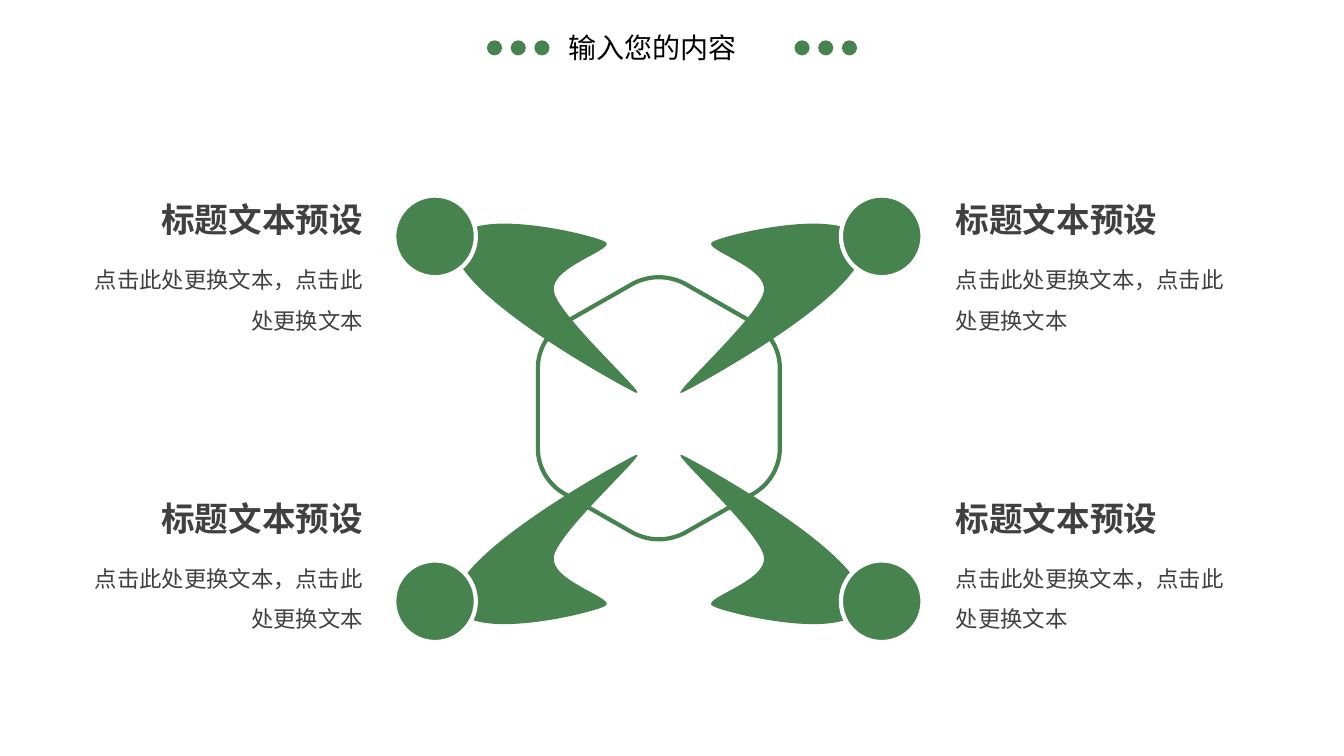
from itertools import product

from lxml import etree
from pptx import Presentation
from pptx.dml.color import RGBColor
from pptx.enum.shapes import MSO_SHAPE
from pptx.enum.text import MSO_ANCHOR, PP_ALIGN
from pptx.oxml.ns import qn
from pptx.util import Inches, Pt

OVAL = MSO_SHAPE.OVAL
TOP, MIDDLE = MSO_ANCHOR.TOP, MSO_ANCHOR.MIDDLE
LEFT, RIGHT, JUSTIFY = PP_ALIGN.LEFT, PP_ALIGN.RIGHT, PP_ALIGN.JUSTIFY

FONT = "Noto Sans CJK SC"
COLORS = {"green": "47834F", "white": "FFFFFF", "text": "404040", "black": "000000"}
HEADER = "输入您的内容"
HEADING = "标题文本预设"
BODY = "点击此处更换文本，点击此处更换文本"
HEADER_FORMAT = {"size": Pt(20)}
HEADING_FORMAT = {"size": Pt(24), "bold": True}
BODY_FORMAT = {"size": Pt(16)}
CAPTIONS = [(9.48, 1.97, LEFT), (0.74, 4.93, RIGHT), (0.74, 1.97, RIGHT), (9.48, 4.93, LEFT)]

BLADE_CENTER = (13.07 / 2, 8.41 / 2)
BLADE = [
    [(1.04, 1.31), (1.1, 1.56), (0.38, 1.74), (0.54, 1.81)],
    [(0.54, 1.81), (0.7, 1.89), (2.02, 2.2), (2.02, 1.74)],
    [(2.02, 1.74), (2.02, 1.28), (0.4, 0.39), (0.23, 0.31)],
    [(0.23, 0.31), (0.07, 0.24), (0.99, 1.06), (1.04, 1.31)],
]
HEXAGON_CENTER = (13.07 / 2, 4.05)
HEXAGON_TOP = [(-0.25, -1.24), (-0.09, -1.32), (0.09, -1.32), (0.25, -1.24)]
HEXAGON_SIDE = [(0.95, -0.84), (1.1, -0.75), (1.2, -0.58), (1.2, -0.4)]


def rgb(name):
    """Return the named colour."""
    return RGBColor.from_string(COLORS[name])


def style(sp, fill, line=None):
    """Set a flat fill and an optional 3 pt outline."""
    sp.shadow.inherit = False
    sp.fill.solid()
    sp.fill.fore_color.rgb = rgb(fill)
    if line:
        sp.line.color.rgb = rgb(line)
        sp.line.width = Pt(3)
    else:
        sp.line.fill.background()


def add_circle(s, x, y, size, line=None):
    """Add a green circle."""
    sp = s.shapes.add_shape(OVAL, Inches(x), Inches(y), Inches(size), Inches(size))
    style(sp, "green", line)


def bezier(points, steps=15):
    """Return points along a cubic curve."""
    weights = [((1 - t) ** 3, 3 * t * (1 - t) ** 2, 3 * t * t * (1 - t), t ** 3)
               for t in (i / steps for i in range(steps + 1))]
    return [tuple(sum(w * p[axis] for w, p in zip(ws, points)) for axis in (0, 1))
            for ws in weights]


def mirror(curve, sx, sy):
    """Reflect a curve across the chosen axes."""
    return [(sx * x, sy * y) for x, y in curve]


def place(points, center):
    """Move points to a centre and convert them to slide lengths."""
    return [(Inches(center[0] + x), Inches(center[1] + y)) for x, y in points]


def add_outline(s, curves, center, fill, line=None):
    """Add a closed outline made of curves joined by straight sides."""
    points = [p for curve in curves for p in place(bezier(curve), center)]
    builder = s.shapes.build_freeform(*points[0], scale=1.0)
    builder.add_line_segments(points[1:], close=True)
    sp = builder.convert_to_shape()
    style(sp, fill, line)
    return sp


def add_hexagon(s):
    """Add the rounded hexagon behind the blades."""
    half = [HEXAGON_TOP, HEXAGON_SIDE, mirror(HEXAGON_SIDE, 1, -1)[::-1]]
    curves = half + [mirror(curve, -1, -1) for curve in half]
    add_outline(s, curves, HEXAGON_CENTER, "white", "green")


def add_blade(s, sx, sy):
    """Add one blade with true cubic curves."""
    curves = [mirror(curve, sx, sy) for curve in BLADE]
    sp = add_outline(s, curves, BLADE_CENTER, "green")
    outline = next(sp._element.iter(qn("a:lnTo"))).getparent()
    for segment in outline.findall(qn("a:lnTo")):
        outline.remove(segment)
    close = outline.find(qn("a:close"))
    for curve in curves:
        cubic = etree.Element(qn("a:cubicBezTo"))
        for x, y in place(curve[1:], BLADE_CENTER):
            etree.SubElement(cubic, qn("a:pt"), x=str(x - sp.left), y=str(y - sp.top))
        close.addprevious(cubic)


def add_text(s, box, text, fmt, color="text", align=LEFT, anchor=TOP,
             wrap=True, spacing=None, inset=0):
    """Add a one-paragraph text box."""
    tf = s.shapes.add_textbox(*(Inches(v) for v in box)).text_frame
    frame = {"word_wrap": wrap, "vertical_anchor": anchor,
             "margin_left": Inches(2 * inset), "margin_right": Inches(2 * inset),
             "margin_top": Inches(inset), "margin_bottom": Inches(inset)}
    for name, value in frame.items():
        setattr(tf, name, value)
    p = tf.paragraphs[0]
    p.alignment = align
    p.line_spacing = spacing
    r = p.add_run()
    r.text = text
    for name, value in {"name": FONT, **fmt}.items():
        setattr(r.font, name, value)
    r.font.color.rgb = rgb(color)


def add_dots(s, left):
    """Add a row of three dots."""
    for i in range(3):
        add_circle(s, left + i * 0.47 / 2, 0.4, 0.15)


def add_header(s):
    """Add the slide title between two rows of dots."""
    add_dots(s, 4.83)
    add_text(s, (5.54, 0.25, 2.33, 0.44), HEADER, HEADER_FORMAT, "black",
             JUSTIFY, inset=0.05)
    add_dots(s, 7.88)


def add_caption(s, x, y, align):
    """Add a heading with its description."""
    add_text(s, (x, y, 2.86, 0.41), HEADING, HEADING_FORMAT, align=align,
             anchor=MIDDLE, wrap=False)
    add_text(s, (x, y + 0.54, 2.86, 0.9), BODY, BODY_FORMAT, align=align, spacing=1.5)


def main():
    """Build and save the slide."""
    prs = Presentation()
    prs.slide_width, prs.slide_height = Inches(13.33), Inches(7.5)
    s = prs.slides.add_slide(prs.slide_layouts[6])
    add_header(s)
    add_hexagon(s)
    for sy, sx in product((-1, 1), (1, -1)):
        add_blade(s, sx, sy)
    for x, y in product((3.91, 8.34), (1.94, 5.56)):
        add_circle(s, x, y, 0.81, "white")
    for caption in CAPTIONS:
        add_caption(s, *caption)
    prs.save("out.pptx")


if __name__ == "__main__":
    main()
